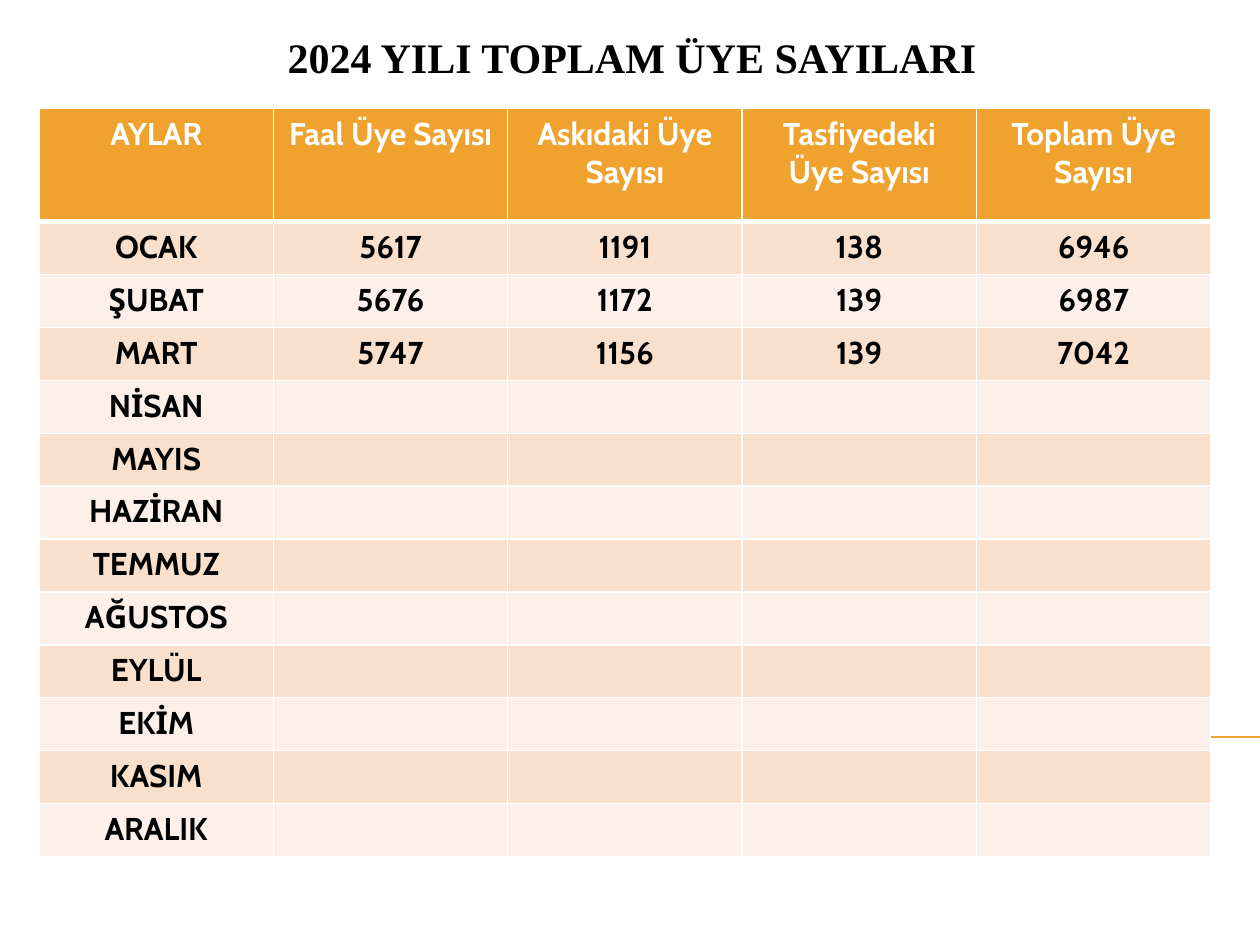
from lxml import etree
from pptx import Presentation
from pptx.dml.color import RGBColor
from pptx.enum import shapes, text
from pptx.oxml import ns
from pptx.util import Inches, Pt

ORANGE = RGBColor(0xF0, 0xA2, 0x2E)
PEACH = RGBColor(0xF9, 0xE0, 0xCD)
CREAM = RGBColor(0xFC, 0xF0, 0xE8)
WHITE = RGBColor(0xFF, 0xFF, 0xFF)
BLACK = RGBColor(0, 0, 0)

HEADINGS = ["AYLAR", "Faal Üye Sayısı", "Askıdaki Üye Sayısı",
            "Tasfiyedeki Üye Sayısı", "Toplam Üye Sayısı"]
MONTHS = ["OCAK", "ŞUBAT", "MART", "NİSAN", "MAYIS", "HAZİRAN", "TEMMUZ",
          "AĞUSTOS", "EYLÜL", "EKİM", "KASIM", "ARALIK"]
COUNTS = {
    "OCAK": [5617, 1191, 138, 6946],
    "ŞUBAT": [5676, 1172, 139, 6987],
    "MART": [5747, 1156, 139, 7042],
}


def format_paragraph(paragraph, font_name, size, color):
    paragraph.alignment = text.PP_ALIGN.CENTER
    for run in paragraph.runs:
        run.font.name = font_name
        run.font.size = Pt(size)
        run.font.bold = True
        run.font.color.rgb = color


def set_borders(cell, widths):
    properties = cell._tc.get_or_add_tcPr()
    for index, (side, width) in enumerate(widths.items()):
        border = etree.Element(ns.qn(f"a:ln{side}"), w=str(Pt(width)))
        fill = etree.SubElement(border, ns.qn("a:solidFill"))
        etree.SubElement(fill, ns.qn("a:srgbClr"), val=str(WHITE))
        properties.insert(index, border)


def add_accent_line(slide, left, top, width):
    accent = slide.shapes.add_connector(
        shapes.MSO_CONNECTOR.STRAIGHT, left, top, left + width, top)
    accent.line.color.rgb = ORANGE
    accent.line.width = Pt(0.75)
    etree.SubElement(accent._element.spPr, ns.qn("a:effectLst"))


def place_title(slide, left, top, width, height):
    title = slide.shapes.title
    title.left, title.top, title.width, title.height = left, top, width, height
    frame = title.text_frame
    frame.text = "2024 YILI TOPLAM ÜYE SAYILARI"
    frame.vertical_anchor = text.MSO_ANCHOR.BOTTOM
    frame.auto_size = text.MSO_AUTO_SIZE.NONE
    format_paragraph(frame.paragraphs[0], "Times New Roman", 24, BLACK)


def add_member_table(slide, left, top, width, header_height, month_height):
    rows = [HEADINGS] + [[month, *COUNTS.get(month, [""] * 4)] for month in MONTHS]
    height = header_height + month_height * len(MONTHS)
    members = slide.shapes.add_table(
        len(rows), len(HEADINGS), left, top, width, height).table
    for column in members.columns:
        column.width = width // len(HEADINGS)
    for row_index, values in enumerate(rows):
        is_header = row_index == 0
        members.rows[row_index].height = header_height if is_header else month_height
        row_fill = ORANGE if is_header else PEACH if row_index % 2 else CREAM
        borders = {"L": 1, "R": 1, "T": 3 if row_index == 1 else 1,
                   "B": 3 if is_header else 1}
        for column_index, value in enumerate(values):
            cell = members.cell(row_index, column_index)
            cell.text = str(value)
            format_paragraph(cell.text_frame.paragraphs[0], "Cabin", 18,
                             WHITE if is_header else BLACK)
            cell.fill.solid()
            cell.fill.fore_color.rgb = row_fill
            set_borders(cell, borders)


def main():
    deck = Presentation()
    deck.slide_width, deck.slide_height = Inches(10), Inches(7.5)
    slide = deck.slides.add_slide(deck.slide_layouts[5])
    add_accent_line(slide, Inches(0.56), Inches(5.85), Inches(9.44))
    place_title(slide, Inches(0.39), Inches(0.23), Inches(9.25), Inches(0.47))
    add_member_table(slide, Inches(0.31), Inches(0.86), Inches(9.3),
                     Inches(0.9), Inches(0.42))
    deck.save("out.pptx")


if __name__ == "__main__":
    main()
